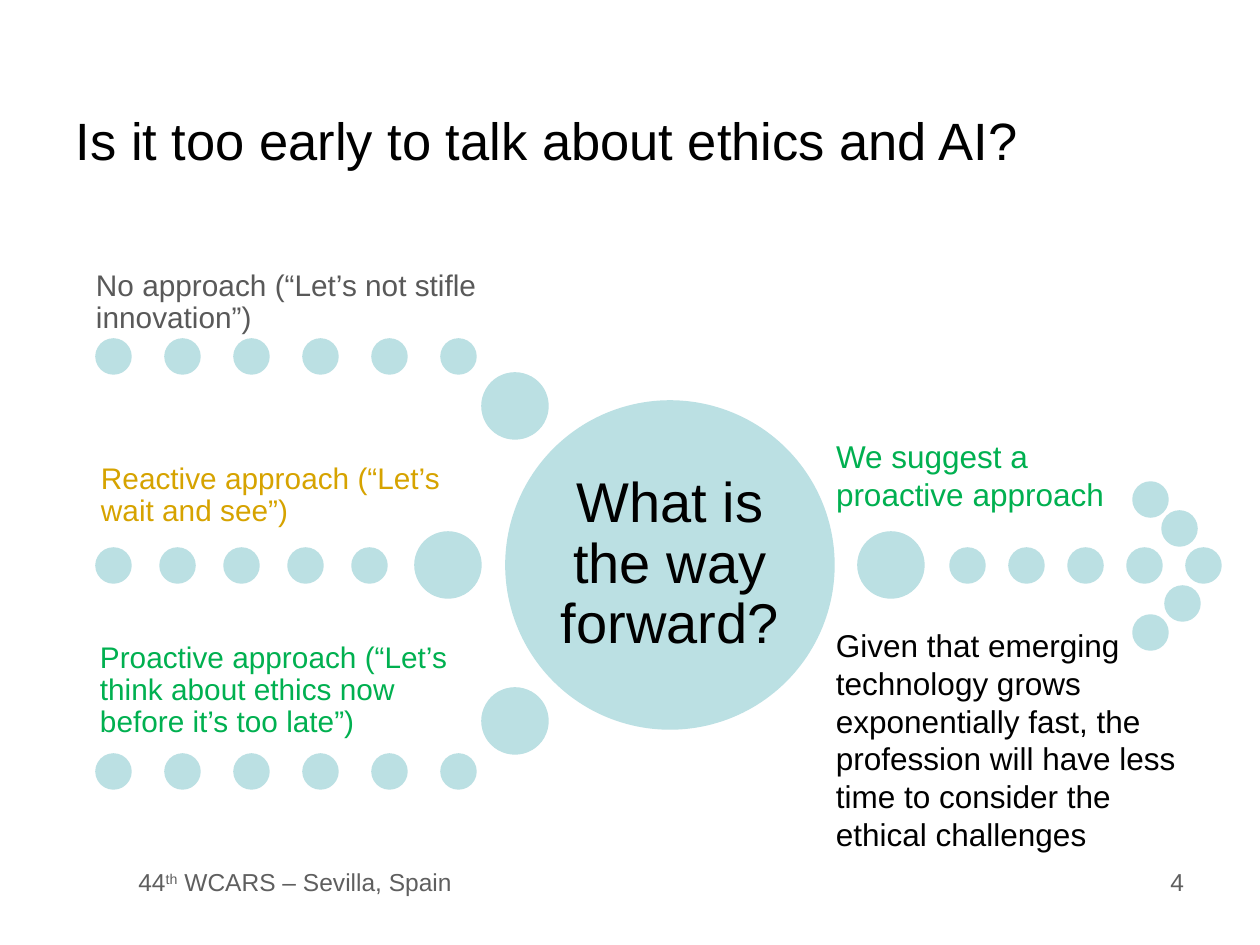
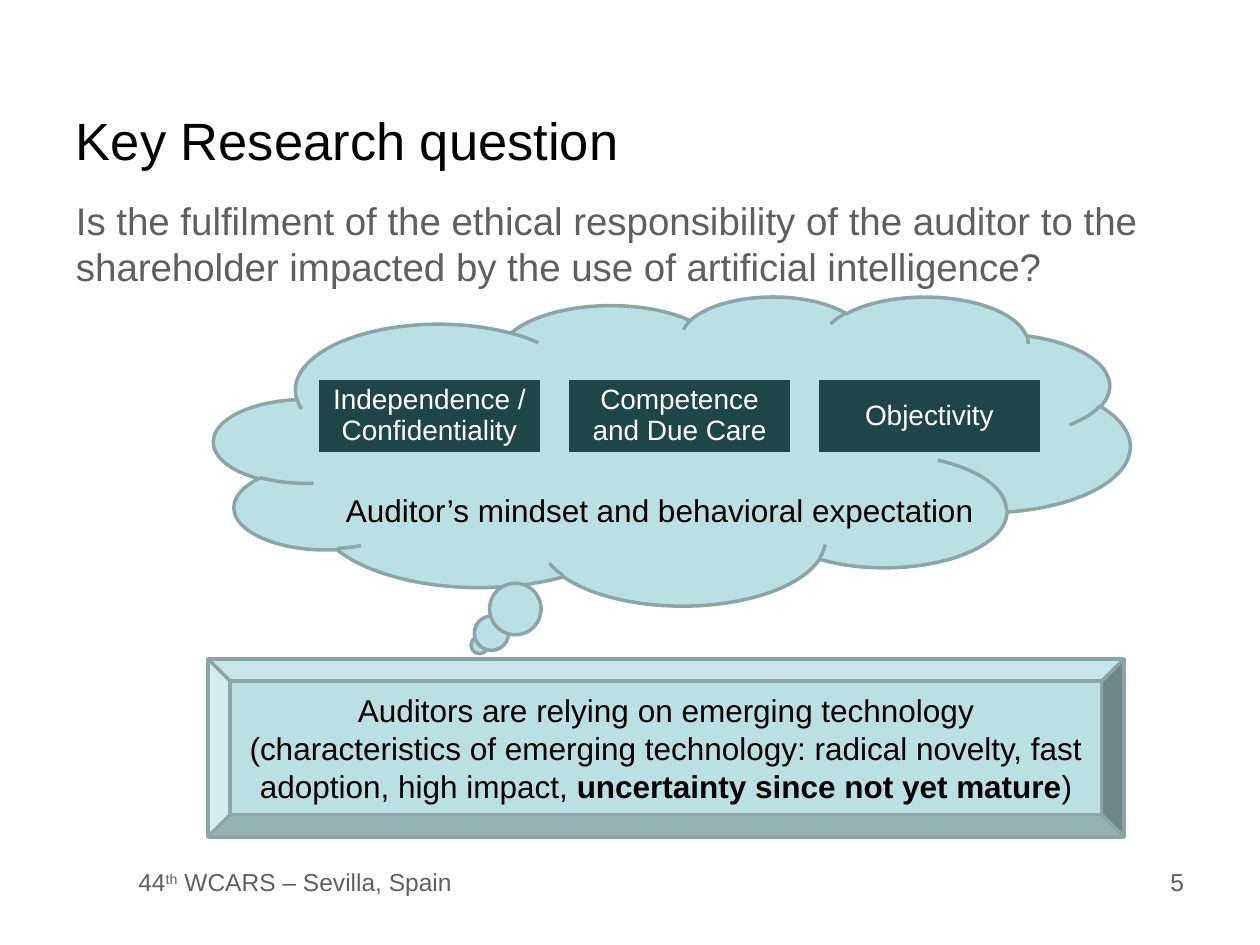
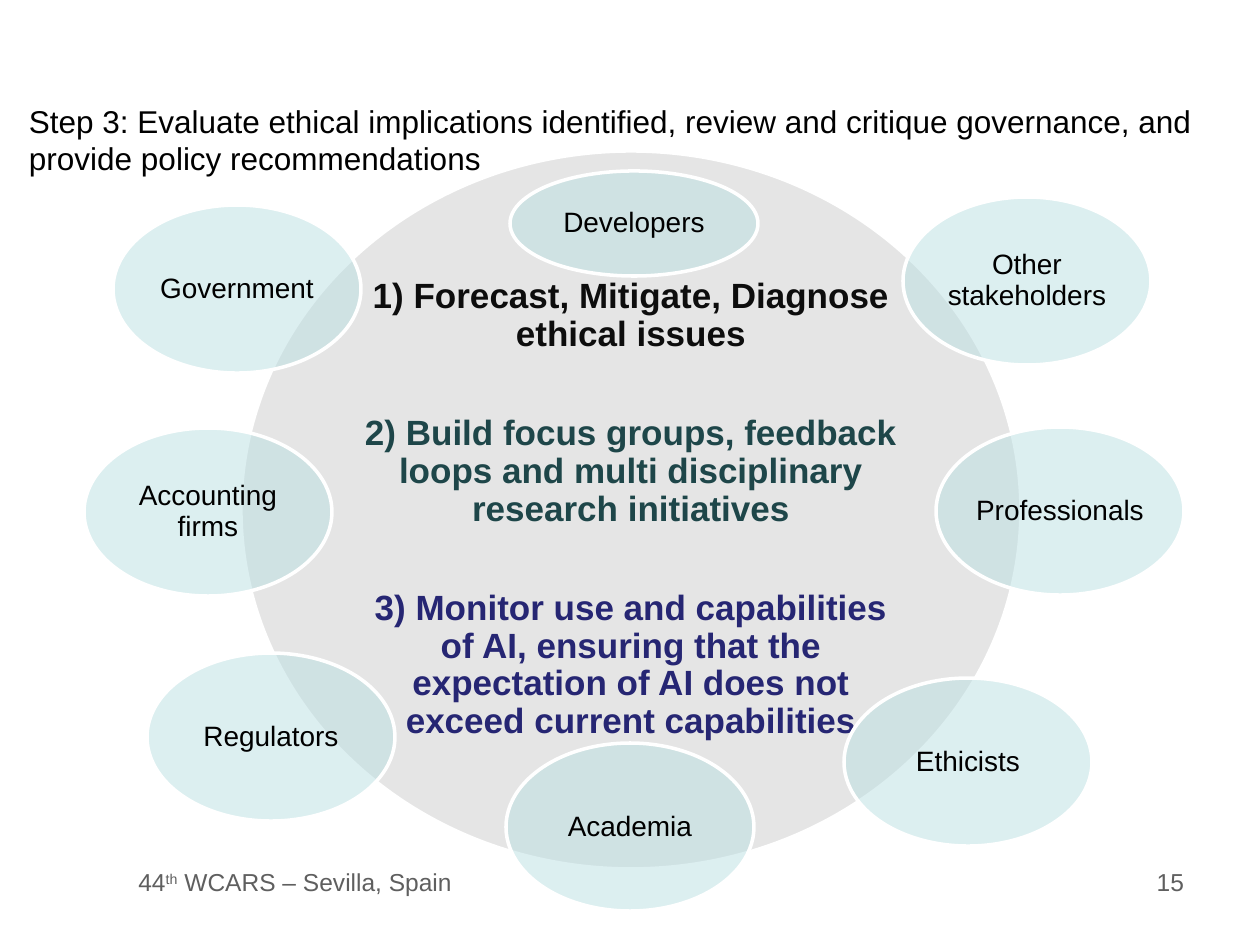
from dataclasses import dataclass

from lxml import etree
from pptx import Presentation
from pptx import util as u
from pptx.dml.color import RGBColor
from pptx.enum import shapes, text
from pptx.oxml.ns import qn

EMU_PER_PX = 914400 / 126
LEFT, CENTER, RIGHT = text.PP_ALIGN.LEFT, text.PP_ALIGN.CENTER, text.PP_ALIGN.RIGHT
TOP, MIDDLE, BOTTOM = text.MSO_ANCHOR.TOP, text.MSO_ANCHOR.MIDDLE, text.MSO_ANCHOR.BOTTOM
OVAL = shapes.MSO_SHAPE.OVAL


@dataclass(frozen=True)
class Theme:
    font: str = "Arial"
    black: str = "000000"
    white: str = "FFFFFF"
    gray: str = "5F5F5F"
    dark_gray: str = "595959"
    near_black: str = "0D0D0D"
    disc_gray: str = "CCCCCC"
    aqua: str = "BBE0E3"
    aqua_line: str = "8AA6A8"
    teal: str = "1E4649"
    navy: str = "262673"
    green: str = "00B050"
    amber: str = "D6A300"
    title: int = 30
    question: int = 32
    lead: int = 22
    heading: int = 20
    body: int = 18
    approach: int = 17
    label: int = 16
    footer: int = 14
    line: int = 2
    tight: float = 0.9


THEME = Theme()
SMALL_DOT, BIG_DOT = 33, 64


def px(length):
    return u.Emu(round(length * EMU_PER_PX))


def box(*lengths):
    return [px(length) for length in lengths]


def set_values(target, values):
    for name, value in values.items():
        setattr(target, name, value)


def write(shape, paragraphs, size, color=THEME.black, align=LEFT, anchor=TOP,
          insets=(13, 6), spacing=None, gap=0):
    frame = shape.text_frame
    side, edge = box(*insets)
    set_values(frame, {"word_wrap": True, "vertical_anchor": anchor,
                       "margin_left": side, "margin_right": side,
                       "margin_top": edge, "margin_bottom": edge})
    if isinstance(paragraphs, str):
        paragraphs = [[(paragraphs, {})]]
    for index, runs in enumerate(paragraphs):
        paragraph = frame.add_paragraph() if index else frame.paragraphs[0]
        set_values(paragraph, {"alignment": align, "line_spacing": spacing,
                               "space_before": u.Pt(gap if index else 0)})
        for words, extra in runs:
            run = paragraph.add_run()
            run.text = words
            set_values(run.font, {"name": THEME.font, "size": u.Pt(size),
                                  "bold": extra.get("bold", False)})
            run.font.color.rgb = RGBColor.from_string(extra.get("color", color))
            if "baseline" in extra:
                run.font._element.set("baseline", str(extra["baseline"]))


def add_text(slide, position, paragraphs, size, **options):
    write(slide.shapes.add_textbox(*box(*position)), paragraphs, size, **options)


def add_shape(slide, kind, position, fill=THEME.aqua, line=THEME.aqua, opacity=100):
    shape = slide.shapes.add_shape(kind, *box(*position))
    shape.shadow.inherit = False
    shape.fill.solid()
    shape.fill.fore_color.rgb = RGBColor.from_string(fill)
    shape.line.color.rgb = RGBColor.from_string(line)
    shape.line.width = u.Pt(THEME.line)
    if opacity < 100:
        color = shape._element.spPr.find(qn("a:solidFill"))[0]
        etree.SubElement(color, qn("a:alpha")).set("val", str(opacity * 1000))
    return shape


def add_dot(slide, left, top, diameter=SMALL_DOT):
    return add_shape(slide, OVAL, (left, top, diameter, diameter))


def add_dot_row(slide, left, top, count, step):
    for index in range(count):
        add_dot(slide, left + index * step, top)


def add_bubble(slide, position, fill, paragraphs, size, **options):
    bubble = add_shape(slide, OVAL, position, fill, THEME.white, opacity=50)
    write(bubble, paragraphs, size, align=CENTER, anchor=MIDDLE,
          insets=(3, 3), spacing=THEME.tight, **options)


def add_slide(presentation, title, number, title_box=(63, 84, 1134, 111), title_size=THEME.title):
    slide = presentation.slides.add_slide(presentation.slide_layouts[6])
    footer = [[("44", {}), ("th", {"baseline": 30000}), (" WCARS – Sevilla, Spain", {})]]
    for position, words in (((98, 861, 367, 66), footer), ((903, 861, 294, 66), str(number))):
        add_text(slide, position, words, THEME.footer, color=THEME.gray, align=RIGHT)
    add_text(slide, title_box, title, title_size, anchor=MIDDLE)
    return slide


def build_approaches(presentation):
    slide = add_slide(presentation, "Is it too early to talk about ethics and AI?", 4)
    for row in ((97, 340, 6, 69), (97, 549, 5, 64), (97, 755, 6, 69), (951, 549, 5, 59)):
        add_dot_row(slide, *row)
    for left, top in ((1134, 483), (1134, 616), (1163, 512), (1166, 587)):
        add_dot(slide, left, top)
    for left, top in ((483, 374), (416, 533), (483, 689), (859, 533)):
        add_dot(slide, left, top, BIG_DOT)
    write(add_dot(slide, 507, 402, 326), "What is the way forward?", THEME.question,
          align=CENTER, anchor=MIDDLE, insets=(5, 5), spacing=THEME.tight)
    approaches = (
        ((96, 252, 406, 83), "No approach (“Let’s not stifle innovation”)", THEME.dark_gray),
        ((101, 445, 352, 83), "Reactive approach (“Let’s wait and see”)", THEME.amber),
        ((100, 616, 352, 123),
         "Proactive approach (“Let’s think about ethics now before it’s too late”)", THEME.green),
    )
    for position, words, color in approaches:
        add_text(slide, position, words, THEME.approach, color=color, anchor=BOTTOM,
                 insets=(0, 0), spacing=THEME.tight)
    add_text(slide, (823, 431, 346, 89), "We suggest a proactive approach",
             THEME.body, color=THEME.green)
    add_text(slide, (823, 620, 379, 242),
             "Given that emerging technology grows exponentially fast, the profession "
             "will have less time to consider the ethical challenges", THEME.body)


def build_question(presentation):
    slide = add_slide(presentation, "Key Research question", 5)
    add_text(slide, (63, 191, 1134, 625),
             "Is the fulfilment of the ethical responsibility of the auditor to the "
             "shareholder impacted by the use of artificial intelligence?",
             THEME.lead, color=THEME.gray)
    cloud = add_shape(slide, shapes.MSO_SHAPE.CLOUD_CALLOUT, (214, 296, 916, 309),
                      line=THEME.aqua_line)
    cloud.adjustments[0], cloud.adjustments[1] = -0.21, 0.63
    principles = ("Independence / Confidentiality", "Competence and Due Care", "Objectivity")
    for index, words in enumerate(principles):
        card = add_shape(slide, shapes.MSO_SHAPE.RECTANGLE,
                         (317 + index * 250, 378, 225, 76), fill=THEME.teal)
        write(card, words, THEME.label, color=THEME.white, align=CENTER, anchor=MIDDLE,
              insets=(14, 9), spacing=THEME.tight)
    add_text(slide, (333, 485, 678, 50),
             "Auditor’s mindset and behavioral expectation", THEME.body)
    plinth = add_shape(slide, shapes.MSO_SHAPE.BEVEL, (208, 659, 916, 178),
                       line=THEME.aqua_line)
    write(plinth, [
        [("Auditors are relying on emerging technology", {})],
        [("(characteristics of emerging technology: radical novelty, fast adoption, "
          "high impact, ", {}),
         ("uncertainty since not yet mature", {"bold": True}), (")", {})],
    ], THEME.body, align=CENTER, anchor=MIDDLE)


def build_stakeholders(presentation):
    slide = add_slide(
        presentation,
        "Step 3: Evaluate ethical implications identified, review and critique governance, "
        "and provide policy recommendations",
        15, (16, 84, 1222, 111), THEME.body)
    actions = (
        ("1) Forecast, Mitigate, Diagnose ethical issues", THEME.near_black),
        ("2) Build focus groups, feedback loops and multi disciplinary research initiatives",
         THEME.teal),
        ("3) Monitor use and capabilities of AI, ensuring that the expectation of AI "
         "does not exceed current capabilities", THEME.navy),
    )
    add_bubble(slide, (241, 151, 780, 718), THEME.disc_gray,
               [[(words, {"bold": True, "color": color})] for words, color in actions],
               THEME.heading, gap=35)
    stakeholders = (
        ("Developers", 510, 171, 105),
        ("Other stakeholders", 903, 197, 168),
        ("Professionals", 936, 427, 168),
        ("Ethicists", 844, 678, 168),
        ("Academia", 506, 743, 168),
        ("Regulators", 147, 653, 168),
        ("Accounting firms", 84, 428, 168),
        ("Government", 113, 205, 168),
    )
    for name, left, top, height in stakeholders:
        add_bubble(slide, (left, top, 248, height), THEME.aqua, name, THEME.label)


def main():
    presentation = Presentation()
    set_values(presentation, {"slide_width": px(1260), "slide_height": px(945)})
    build_approaches(presentation)
    build_question(presentation)
    build_stakeholders(presentation)
    presentation.save("out.pptx")


if __name__ == "__main__":
    main()
